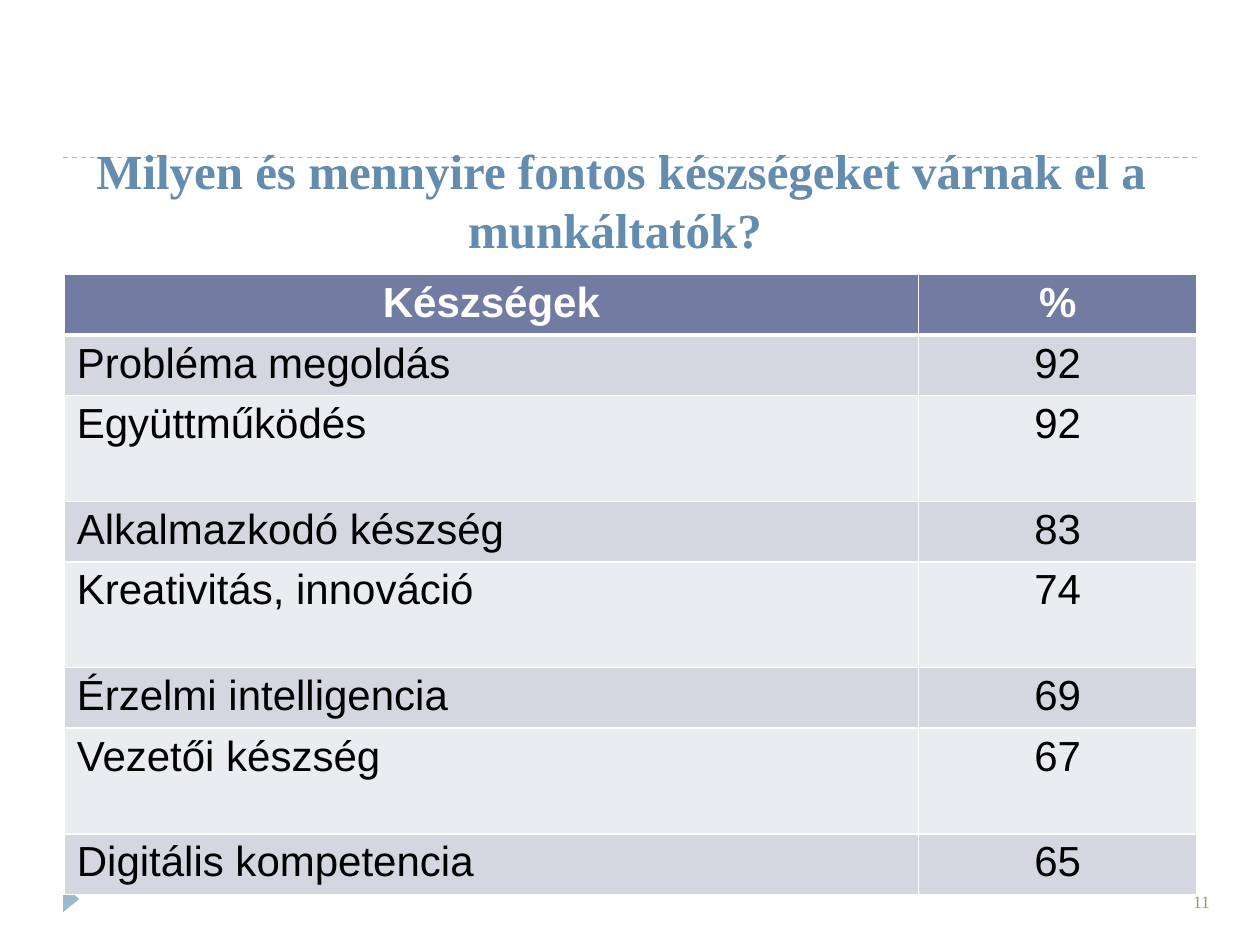
from pptx import Presentation
from pptx.dml.color import RGBColor
from pptx.enum.dml import MSO_LINE
from pptx.enum.shapes import MSO_CONNECTOR, MSO_SHAPE
from pptx.enum.text import MSO_ANCHOR, PP_ALIGN
from pptx.oxml.ns import qn
from pptx.util import Inches, Pt
from lxml import etree

LEFT, CENTER, RIGHT = PP_ALIGN.LEFT, PP_ALIGN.CENTER, PP_ALIGN.RIGHT
TOP, BOTTOM = MSO_ANCHOR.TOP, MSO_ANCHOR.BOTTOM
DASH = MSO_LINE.DASH
STRAIGHT = MSO_CONNECTOR.STRAIGHT
TRIANGLE = MSO_SHAPE.ISOSCELES_TRIANGLE

COLORS = {
    "accent": "9FB8CD",
    "number": "A69765",
    "title": "638CAE",
    "header": "727CA3",
    "odd": "D5D7E0",
    "even": "EBECF0",
    "white": "FFFFFF",
    "black": "000000",
}
SKILLS = [
    ("Probléma megoldás", 92),
    ("Együttműködés", 92),
    ("Alkalmazkodó készség", 83),
    ("Kreativitás, innováció", 74),
    ("Érzelmi intelligencia", 69),
    ("Vezetői készség", 67),
    ("Digitális kompetencia", 65),
]
COLUMN_WIDTHS = (6.78, 2.21)
ROW_HEIGHT, TALL_ROW_HEIGHT = 0.47, 0.84


def rgb(name):
    """Return the named palette colour."""
    return RGBColor.from_string(COLORS[name])


def write_text(tf, text, size=24, font="Arial", color="black", bold=False, align=LEFT):
    """Write one formatted paragraph into a text frame."""
    p = tf.paragraphs[0]
    p.alignment = align
    r = p.add_run()
    r.text = text
    r.font.size = Pt(size)
    r.font.name = font
    r.font.bold = bold
    r.font.color.rgb = rgb(color)


def add_text(s, box, text, anchor=TOP, **fmt):
    """Add a wrapped text box."""
    tf = s.shapes.add_textbox(*map(Inches, box)).text_frame
    tf.word_wrap = True
    tf.vertical_anchor = anchor
    write_text(tf, text, font="Times New Roman", **fmt)


def add_rule(s, y):
    """Add a dashed horizontal line across the slide."""
    line = s.shapes.add_connector(STRAIGHT, Inches(0.5), Inches(y), Inches(9.5), Inches(y))
    line.line.color.rgb = rgb("accent")
    line.line.width = Pt(0.75)
    line.line.dash_style = DASH
    etree.SubElement(line._element.spPr, qn("a:effectLst"))


def add_marker(s):
    """Add the triangle pointing right in the footer."""
    sp = s.shapes.add_shape(TRIANGLE, Inches(0.46), Inches(7.07), Inches(0.21), Inches(0.13))
    sp.rotation = 90
    sp.shadow.inherit = False
    sp.fill.solid()
    sp.fill.fore_color.rgb = rgb("accent")
    sp.line.fill.background()


def set_borders(cell, bottom):
    """Give a cell white borders, with its own bottom width."""
    tc_pr = cell._tc.get_or_add_tcPr()
    widths = {"a:lnL": 1, "a:lnR": 1, "a:lnT": 1, "a:lnB": bottom}
    for i, (tag, width) in enumerate(widths.items()):
        ln = etree.Element(qn(tag), w=str(Pt(width)))
        fill = etree.SubElement(ln, qn("a:solidFill"))
        etree.SubElement(fill, qn("a:srgbClr"), val=COLORS["white"])
        tc_pr.insert(i, ln)


def fill_cell(cell, text, fill, bottom=1, **fmt):
    """Write, colour and border one table cell."""
    cell.margin_top = cell.margin_bottom = Inches(0.04)
    cell.fill.solid()
    cell.fill.fore_color.rgb = rgb(fill)
    set_borders(cell, bottom)
    write_text(cell.text_frame, text, **fmt)


def add_skill_table(s):
    """Add the table of skills and percentages."""
    heights = [TALL_ROW_HEIGHT if i and i % 2 == 0 else ROW_HEIGHT
               for i in range(len(SKILLS) + 1)]
    table = s.shapes.add_table(
        len(heights), len(COLUMN_WIDTHS), Inches(0.51), Inches(2.18),
        Inches(sum(COLUMN_WIDTHS)), Inches(sum(heights))).table
    for column, width in zip(table.columns, COLUMN_WIDTHS):
        column.width = Inches(width)
    for row, height in zip(table.rows, heights):
        row.height = Inches(height)
    for col, text in enumerate(("Készségek", "%")):
        fill_cell(table.cell(0, col), text, "header", bottom=3,
                  color="white", bold=True, align=CENTER)
    for i, (skill, percent) in enumerate(SKILLS, 1):
        fill = "odd" if i % 2 else "even"
        fill_cell(table.cell(i, 0), skill, fill)
        fill_cell(table.cell(i, 1), str(percent), fill, align=CENTER)


def main():
    """Build and save the slide."""
    prs = Presentation()
    prs.slide_width, prs.slide_height = Inches(10), Inches(7.5)
    s = prs.slides.add_slide(prs.slide_layouts[6])
    for y in (6.95, 1.25):
        add_rule(s, y)
    add_marker(s)
    add_text(s, (7.37, 7.02, 2.33, 0.4), "11", size=10, color="number", align=RIGHT)
    add_text(s, (0.43, 1.23, 9, 0.87),
             "Milyen és mennyire fontos készségeket várnak el a munkáltatók? ",
             anchor=BOTTOM, size=28, color="title", bold=True, align=CENTER)
    add_skill_table(s)
    prs.save("out.pptx")


if __name__ == "__main__":
    main()
